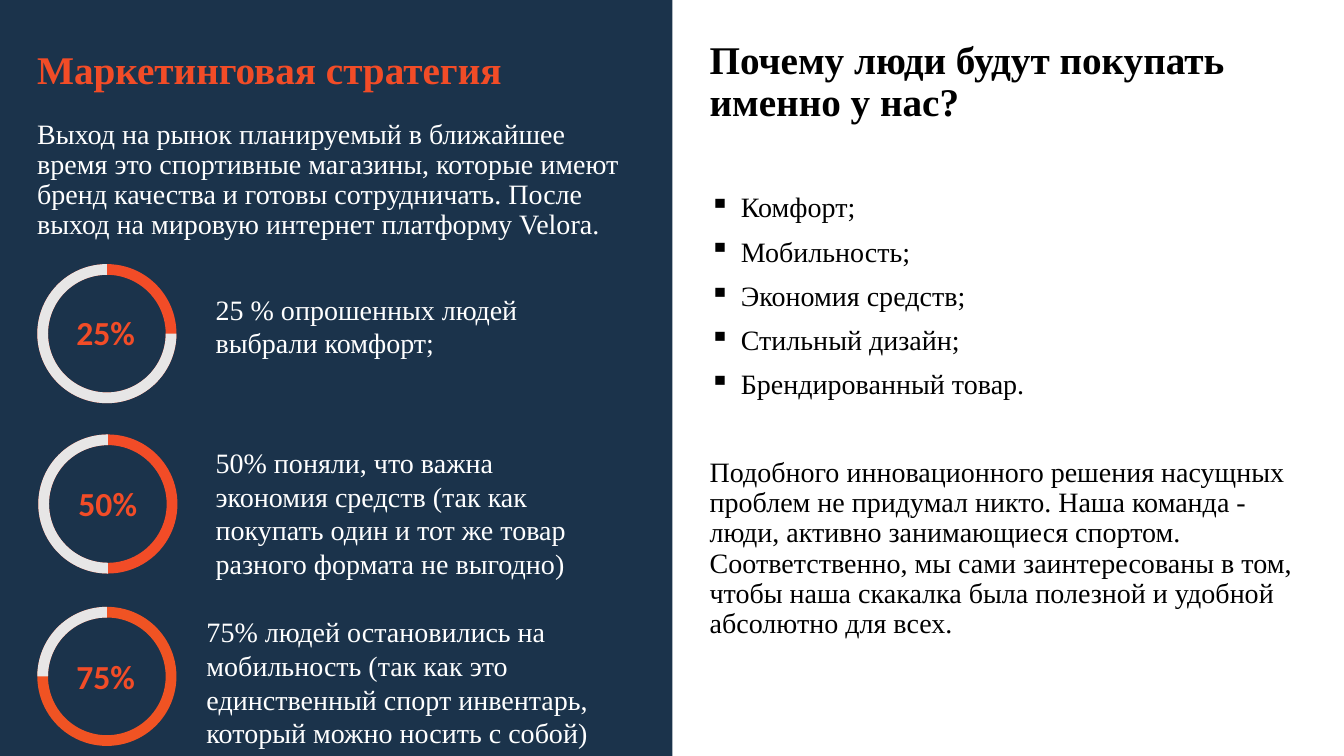
from dataclasses import dataclass

from lxml.etree import SubElement
from pptx import Presentation
from pptx.dml.color import RGBColor
from pptx.enum.shapes import MSO_SHAPE
from pptx.enum.text import MSO_ANCHOR, MSO_AUTO_SIZE
from pptx.oxml.ns import qn
from pptx.slide import Slide
from pptx.util import Emu, Pt

NAVY = RGBColor(0x1B, 0x33, 0x4B)
ORANGE = RGBColor(0xF2, 0x4C, 0x27)
DEEP_ORANGE = RGBColor(0xF0, 0x53, 0x23)
GREY = RGBColor(0xE7, 0xE6, 0xE6)
WHITE = RGBColor(0xFF, 0xFF, 0xFF)
BLACK = RGBColor(0x00, 0x00, 0x00)
SERIF = "Times New Roman"
SANS = "Calibri"
RING = 138
RING_THICKNESS = 0.077


def px(length: int) -> Emu:
    return Emu(length * 9144)


@dataclass(frozen=True)
class Box:
    left: int
    top: int
    width: int
    height: int

    def emu(self) -> tuple[Emu, Emu, Emu, Emu]:
        return px(self.left), px(self.top), px(self.width), px(self.height)


@dataclass(frozen=True)
class Line:
    text: str
    size: int = 20
    color: RGBColor = WHITE
    bold: bool = False
    font: str = SERIF
    spacing: float = 1.0
    before: int = 0
    bullet: bool = False


@dataclass(frozen=True)
class Survey:
    percent: int
    ring_left: int
    ring_top: int
    color: RGBColor
    label: Box
    answer: str
    answer_box: Box


SURVEYS = [
    Survey(25, 37, 262, ORANGE, Box(66, 305, 79, 50),
           "25 % опрошенных людей выбрали комфорт;", Box(204, 285, 407, 77)),
    Survey(50, 38, 431, ORANGE, Box(68, 474, 79, 50),
           "50% поняли, что важна экономия средств (так как покупать один и тот же "
           "товар разного формата не выгодно)", Box(204, 437, 407, 145)),
    Survey(75, 37, 602, DEEP_ORANGE, Box(66, 646, 79, 50),
           "75% людей остановились на мобильность (так как это единственный спорт "
           "инвентарь, который можно носить с собой)", Box(195, 605, 407, 145)),
]
STRATEGY = Line("Маркетинговая стратегия", 28, ORANGE, True, spacing=0.9)
MARKET = Line(
    "Выход на рынок планируемый в ближайшее время это спортивные магазины, которые "
    "имеют бренд качества и готовы сотрудничать. После выход на мировую интернет "
    "платформу Velora.", spacing=0.9)
QUESTION = Line("Почему люди будут покупать именно у нас?", 28, BLACK, True, spacing=0.9)
BENEFITS = ["Комфорт;", "Мобильность;", "Экономия средств;", "Стильный дизайн;",
            "Брендированный товар."]
TEAM = Line(
    "Подобного инновационного решения насущных проблем не придумал никто. Наша "
    "команда - люди, активно занимающиеся спортом. Соответственно, мы сами "
    "заинтересованы в том, чтобы наша скакалка была полезной и удобной абсолютно "
    "для всех.", color=BLACK, spacing=0.9, before=41)


def add_text(slide: Slide, box: Box, lines: list[Line], wrap: bool = True,
             anchor: MSO_ANCHOR = MSO_ANCHOR.TOP, grow: bool = False) -> None:
    frame = slide.shapes.add_textbox(*box.emu()).text_frame
    frame.word_wrap = wrap
    frame.vertical_anchor = anchor
    frame.auto_size = MSO_AUTO_SIZE.SHAPE_TO_FIT_TEXT if grow else MSO_AUTO_SIZE.NONE
    for index, line in enumerate(lines):
        paragraph = frame.add_paragraph() if index else frame.paragraphs[0]
        paragraph.line_spacing = line.spacing
        paragraph.space_before = Pt(line.before)
        if line.bullet:
            properties = paragraph._p.get_or_add_pPr()
            properties.set("marL", str(px(31)))
            properties.set("indent", str(px(-31)))
            SubElement(properties, qn("a:buChar"), char="▪")
        run = paragraph.add_run()
        run.text = line.text
        run.font.size = Pt(line.size)
        run.font.name = line.font
        run.font.bold = line.bold
        run.font.color.rgb = line.color


def add_filled(slide: Slide, kind: MSO_SHAPE, box: Box, color: RGBColor,
               adjustments: tuple[float, ...] = ()) -> None:
    shape = slide.shapes.add_shape(kind, *box.emu())
    shape.shadow.inherit = False
    shape.fill.solid()
    shape.fill.fore_color.rgb = color
    shape.line.fill.background()
    for index, value in enumerate(adjustments):
        shape.adjustments[index] = value


def add_survey(slide: Slide, survey: Survey) -> None:
    ring = Box(survey.ring_left, survey.ring_top, RING, RING)
    rest_start = (270 + 3.6 * survey.percent) % 360
    add_filled(slide, MSO_SHAPE.DONUT, ring, survey.color, (RING_THICKNESS,))
    add_filled(slide, MSO_SHAPE.BLOCK_ARC, ring, GREY,
               (rest_start * 0.6, 270 * 0.6, RING_THICKNESS))
    add_text(slide, survey.label,
             [Line(f"{survey.percent}%", 24, ORANGE, True, SANS)], wrap=False, grow=True)
    add_text(slide, survey.answer_box, [Line(survey.answer)], grow=True)


def main() -> None:
    presentation = Presentation()
    presentation.slide_width = px(1333)
    presentation.slide_height = px(750)
    slide = presentation.slides.add_slide(presentation.slide_layouts[6])

    add_filled(slide, MSO_SHAPE.RECTANGLE, Box(0, 0, 667, 750), NAVY)
    add_text(slide, Box(27, 35, 615, 73), [STRATEGY], anchor=MSO_ANCHOR.MIDDLE)
    add_text(slide, Box(27, 114, 615, 120), [MARKET])
    benefits = [Line(text, color=BLACK, spacing=0.9, before=10 if index else 49, bullet=True)
                for index, text in enumerate(BENEFITS)]
    add_text(slide, Box(694, 35, 613, 699), [QUESTION, *benefits, TEAM])
    for survey in SURVEYS:
        add_survey(slide, survey)

    presentation.save("out.pptx")


if __name__ == "__main__":
    main()
